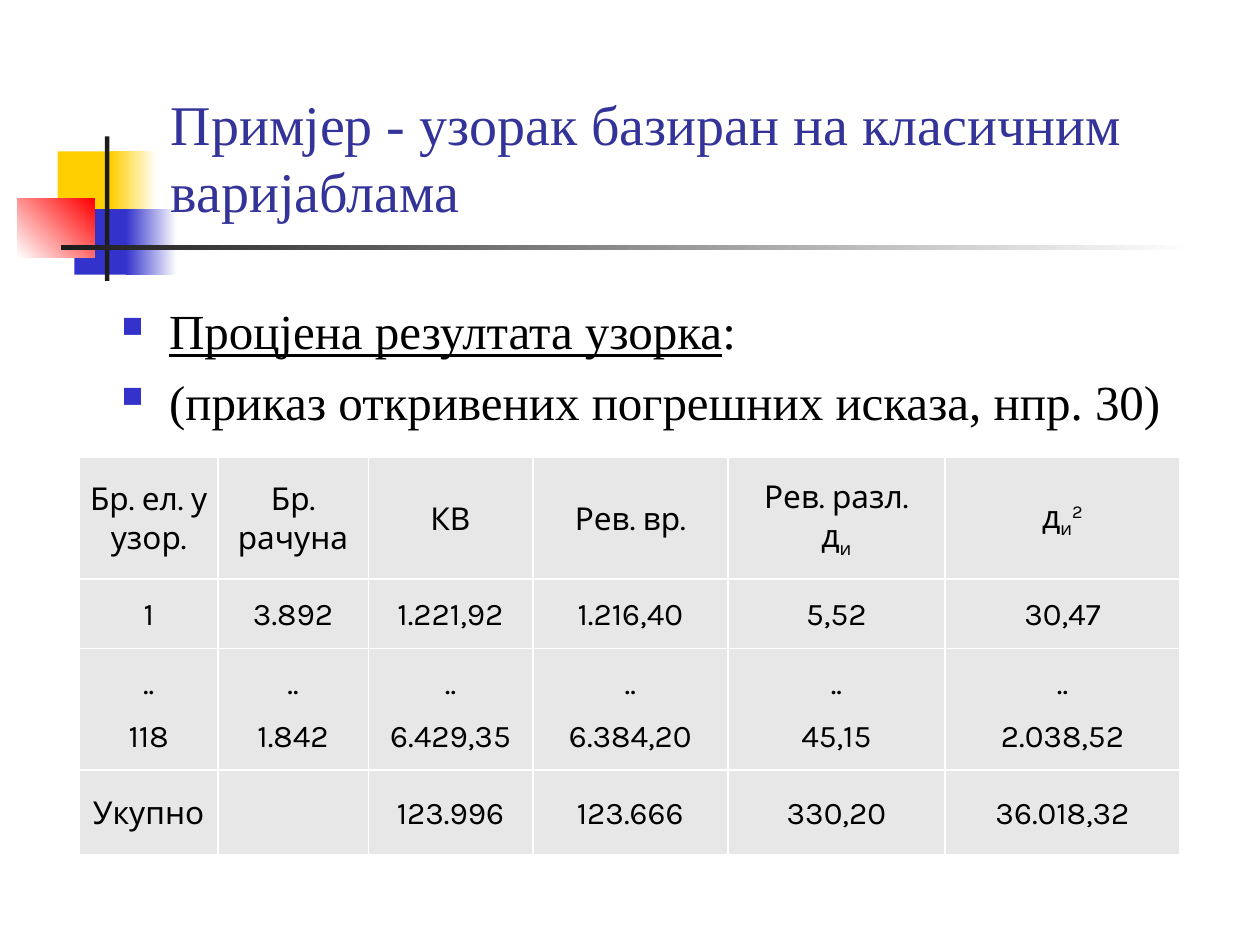
"""Build a slide with a sample results table under a title and two bullets."""
from lxml.etree import SubElement
from pptx import Presentation
from pptx.dml.color import RGBColor
from pptx.enum.shapes import MSO_SHAPE
from pptx.enum.text import MSO_ANCHOR, PP_ALIGN
from pptx.oxml.ns import qn
from pptx.util import Pt

COLORS = {
    "yellow": "FFCF01", "blue": "3333CC", "red": "FF0000", "dark": "1C1C1C",
    "white": "FFFFFF", "title": "333399", "text": "000000", "cell": "E7E7E7",
}


def rgb(name):
    return RGBColor.from_string(COLORS[name])


def set_font(paragraph, name, size, color):
    paragraph.font.name = name
    paragraph.font.size = Pt(size)
    paragraph.font.color.rgb = rgb(color)


presentation = Presentation()
presentation.slide_width, presentation.slide_height = Pt(720), Pt(540)
slide = presentation.slides.add_slide(presentation.slide_layouts[6])

decorations = [
    (33, 86.5, 34.5, 37.5, ["yellow"], 0),
    (63.5, 86.5, 26, 37.5, ["yellow", "white"], 0),
    (42.5, 119.5, 33, 37.5, ["blue"], 0),
    (72, 119.5, 29, 37.5, ["blue", "white"], 0),
    (10, 113.5, 44, 33.5, ["white", "red"], 45),
    (60, 78, 2.5, 82.5, ["dark"], 0),
    (34.75, 140.25, 648, 2.5, ["dark", "white"], 0),
]
for left, top, width, height, colors, angle in decorations:
    shape = slide.shapes.add_shape(
        MSO_SHAPE.RECTANGLE, Pt(left), Pt(top), Pt(width), Pt(height))
    shape.shadow.inherit = False
    shape.line.fill.background()
    if len(colors) == 1:
        shape.fill.solid()
        shape.fill.fore_color.rgb = rgb(colors[0])
    else:
        shape.fill.gradient()
        shape.fill.gradient_angle = angle
        for stop, color, position in zip(shape.fill.gradient_stops, colors, (0, 1)):
            stop.color.rgb = rgb(color)
            stop.position = position

title = slide.shapes.add_textbox(Pt(90.5), Pt(16.5), Pt(613.5), Pt(115)).text_frame
title.word_wrap = True
title.vertical_anchor = MSO_ANCHOR.BOTTOM
title.text = "Примјер - узорак базиран на класичним варијаблама"
set_font(title.paragraphs[0], "Times New Roman", 32, "title")

body = slide.shapes.add_textbox(Pt(62.5), Pt(165), Pt(612), Pt(324)).text_frame
body.word_wrap = True
body.margin_top = Pt(7)
bullets = [
    [("Процјена резултата узорка", True), (":", False)],
    [("(приказ откривених погрешних исказа, нпр. 30)", False)],
]
for index, parts in enumerate(bullets):
    paragraph = body.add_paragraph() if index else body.paragraphs[0]
    properties = paragraph._p.get_or_add_pPr()
    properties.set("marL", str(Pt(27)))
    properties.set("indent", str(Pt(-27)))
    if index:
        paragraph.space_before = Pt(6.5)
    bullet_color = SubElement(properties, qn("a:buClr"))
    SubElement(bullet_color, qn("a:srgbClr"), val=COLORS["blue"])
    SubElement(properties, qn("a:buSzPct"), val="60000")
    SubElement(properties, qn("a:buChar"), char="■")
    set_font(paragraph, "Times New Roman", 28, "text")
    for text, underlined in parts:
        run = paragraph.add_run()
        run.text = text
        if underlined:
            run.font.underline = True

column_widths = [79, 86, 94, 111.5, 124, 134.5]
row_heights = [69.5, 39.5, 69.5, 48.5]
rows = [
    ["Бр. ел. у узор.", "Бр. рачуна", "КВ", "Рев. вр.", "Рев. разл.\vд", "д"],
    ["1", "3.892", "1.221,92", "1.216,40", "5,52", "30,47"],
    ["..\n118", "..\n1.842", "..\n6.429,35", "..\n6.384,20", "..\n45,15", "..\n2.038,52"],
    ["Укупно", "", "123.996", "123.666", "330,20", "36.018,32"],
]
scripts = {(0, 4): [("и", -25000)], (0, 5): [("и", -25000), ("2", 30000)]}

table = slide.shapes.add_table(
    len(rows), len(column_widths), Pt(45.5), Pt(261.5),
    Pt(sum(column_widths)), Pt(sum(row_heights))).table
for column, width in zip(table.columns, column_widths):
    column.width = Pt(width)
for row, height in zip(table.rows, row_heights):
    row.height = Pt(height)

for row_index, row in enumerate(rows):
    for column_index, text in enumerate(row):
        cell = table.cell(row_index, column_index)
        cell.text = text
        cell.vertical_anchor = MSO_ANCHOR.MIDDLE
        cell.margin_left = cell.margin_right = Pt(5.4)
        for part, baseline in scripts.get((row_index, column_index), []):
            run = cell.text_frame.paragraphs[0].add_run()
            run.text = part
            run.font._element.set("baseline", str(baseline))
        for paragraph in cell.text_frame.paragraphs:
            paragraph.alignment = PP_ALIGN.CENTER
            paragraph.line_spacing = 1.07
            paragraph.space_after = Pt(8)
            set_font(paragraph, "Karla", 18, "text")
        cell_properties = cell._tc.get_or_add_tcPr()
        for side in ("a:lnL", "a:lnR", "a:lnT", "a:lnB"):
            border = SubElement(cell_properties, qn(side), w=str(Pt(1)))
            border_fill = SubElement(border, qn("a:solidFill"))
            SubElement(border_fill, qn("a:srgbClr"), val=COLORS["white"])
        cell.fill.solid()
        cell.fill.fore_color.rgb = rgb("cell")

presentation.save("out.pptx")
